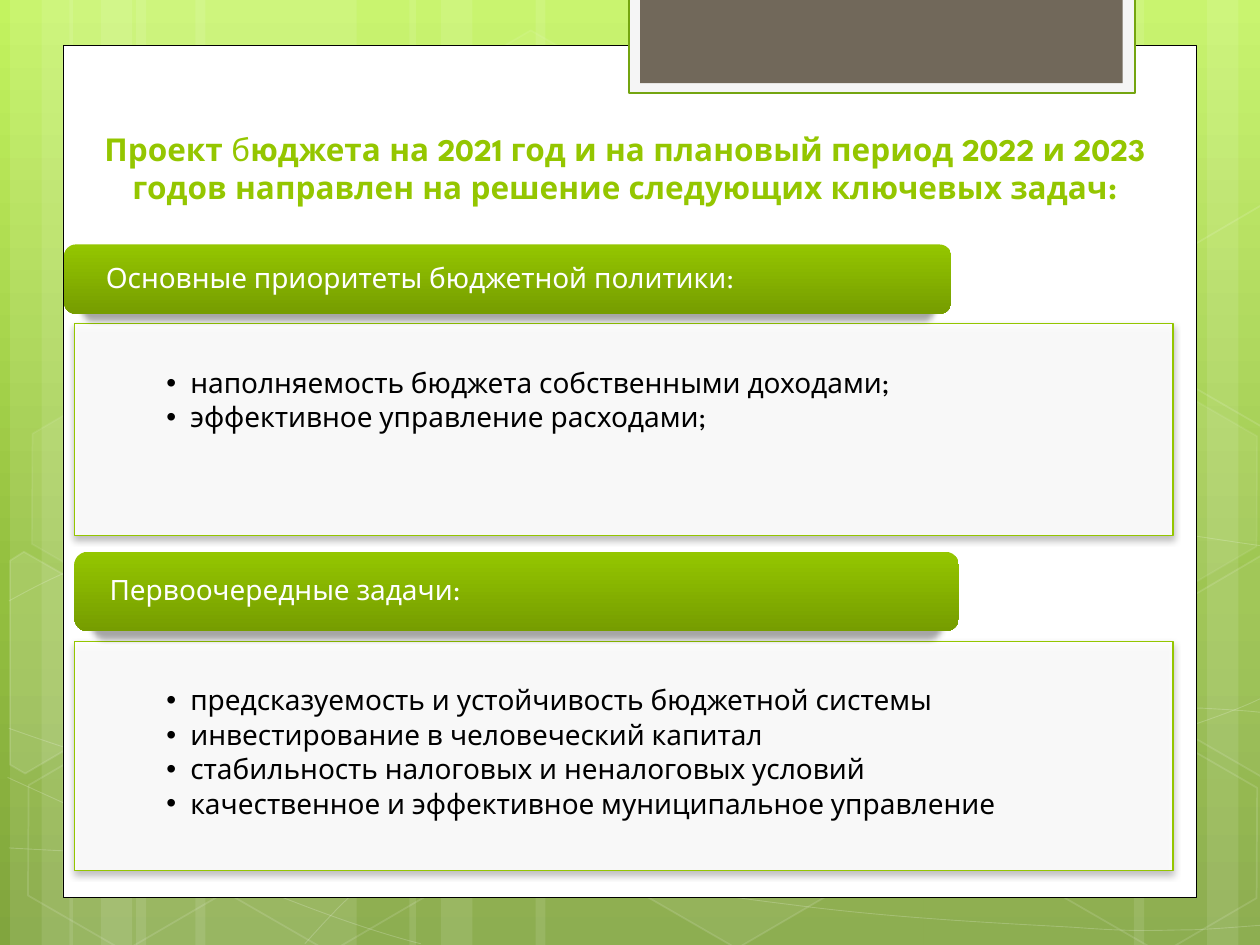
import copy

import lxml.etree
import pptx
import pptx.dml.color
import pptx.enum.shapes
import pptx.enum.text
import pptx.oxml.ns
import pptx.util

Inches = pptx.util.Inches
Pt = pptx.util.Pt
SHAPE = pptx.enum.shapes.MSO_SHAPE
ALIGN = pptx.enum.text.PP_ALIGN
ANCHOR = pptx.enum.text.MSO_ANCHOR
FONT = "League Spartan"
GREEN, WHITE, BLACK = "94C600", "FFFFFF", "000000"

# Vertical light stripes: left, width
STRIPES = [(1.08, 1.75), (0.08, 0.5), (0.33, 0.83), (1.55, 1.75),
           (0.55, 0.5), (0.8, 0.83), (7.33, 1.75), (9.58, 0.5),
           (9, 0.83), (4.25, 3.08), (3.25, 0.5), (3.5, 0.83)]

# Bezier waves: start point, then two handles and an end point per segment
WAVES = [
    [(0.07, 6.73), (0.61, 6.76), (1.15, 6.79), (1.9, 6.78),
     (2.65, 6.77), (3.58, 6.75), (4.58, 6.65), (5.58, 6.55), (7, 6.36),
     (7.92, 6.17), (8.83, 5.98), (9.77, 5.68), (10.07, 5.51)],
    [(0.07, 4.77), (0.36, 4.61), (0.65, 4.46), (1.21, 4.31),
     (1.78, 4.16), (2.59, 3.94), (3.47, 3.87), (4.36, 3.8), (5.44, 3.79),
     (6.54, 3.87), (7.64, 3.95), (9.47, 4.26), (10.07, 4.34)],
    [(0.06, 6.17), (1.27, 6.72), (2.47, 7.27), (3.34, 7.49)],
    [(0.07, 5.78), (0.38, 5.89), (0.7, 6), (1.28, 6.16),
     (1.86, 6.31), (2.73, 6.56), (3.57, 6.73), (4.4, 6.9), (5.45, 7.08),
     (6.28, 7.18), (7.11, 7.29), (8, 7.33), (8.53, 7.36),
     (9.05, 7.4), (9.19, 7.38), (9.45, 7.38), (9.71, 7.37), (9.89, 7.35),
     (10.07, 7.34)],
    [(2.42, 7.49), (2.6, 7.29), (2.78, 7.09), (3.02, 6.91),
     (3.26, 6.73), (3.6, 6.53), (3.88, 6.39), (4.16, 6.25), (4.33, 6.19),
     (4.7, 6.09), (5.06, 5.99), (5.73, 5.85), (6.08, 5.78),
     (6.44, 5.71), (6.49, 5.71), (6.8, 5.69), (7.11, 5.66), (7.6, 5.63),
     (7.94, 5.62), (8.29, 5.61), (8.86, 5.62), (8.86, 5.62),
     (9.08, 5.62), (9.31, 5.62), (9.53, 5.62), (9.71, 5.63), (9.88, 5.64),
     (9.97, 5.65), (10.06, 5.66), (10.03, 5.65), (10.06, 5.66)],
]

# Hexagons: left, top, fill opacity, line opacity
HEXAGONS = [(3.34, 0.36, 4, 8), (4.97, 5.89, 6, 12), (0.11, 5.91, 0, 12),
            (0.14, 3.12, 7, 8), (1.74, 5.92, 0, 12), (7.53, 4.53, 10, 12),
            (8.34, 5.93, 0, 12), (8.34, 3.14, 7, 8)]

# Hexagons cut by the slide edge: points, fill opacity
CUT_HEXAGONS = [
    ([(0.08, 4.45), (0.19, 4.38), (0.96, 4.82), (0.95, 5.7),
      (0.2, 6.14), (0.08, 6.07)], 10),
    ([(9.26, 4.85), (10.01, 4.41), (10.09, 4.46), (10.09, 6.13),
      (10.02, 6.17), (9.26, 5.73)], 4),
    ([(9.26, 2.07), (10.01, 1.63), (10.1, 1.68), (10.09, 3.35),
      (10.02, 3.39), (9.26, 2.95)], 0),
]


def rgb(code):
    return pptx.dml.color.RGBColor.from_string(code)


def fade(sp, where, opacity):
    """Set the opacity, in percent, of a solid fill or line."""
    if opacity < 100:
        for clr in sp.element.xpath(f"p:spPr/{where}a:solidFill/a:srgbClr"):
            alpha = lxml.etree.SubElement(clr, pptx.oxml.ns.qn("a:alpha"))
            alpha.set("val", str(opacity * 1000))


def style(sp, fill=None, opacity=100, line=None, width=1, line_opacity=100):
    sp.shadow.inherit = False
    if fill and opacity:
        sp.fill.solid()
        sp.fill.fore_color.rgb = rgb(fill)
        fade(sp, "", opacity)
    else:
        sp.fill.background()
    if line:
        sp.line.color.rgb = rgb(line)
        sp.line.width = Pt(width)
        fade(sp, "a:ln/", line_opacity)
    else:
        sp.line.fill.background()


def add_box(s, kind, box, **look):
    sp = s.shapes.add_shape(kind, *map(Inches, box))
    style(sp, **look)
    return sp


def add_path(s, points, close, **look):
    pts = [(Inches(x), Inches(y)) for x, y in points]
    builder = s.shapes.build_freeform(*pts[0], scale=1.0)
    builder.add_line_segments(pts[1:], close=close)
    sp = builder.convert_to_shape()
    style(sp, **look)
    return sp


def add_wave(s, nodes):
    """Draw an open curve by joining every three nodes into one Bezier segment."""
    sp = add_path(s, nodes, False, line=WHITE, width=0.5, line_opacity=20)
    lines = sp.element.xpath(".//a:lnTo")
    for i in range(0, len(lines), 3):
        curve = lxml.etree.Element(pptx.oxml.ns.qn("a:cubicBezTo"))
        lines[i].addprevious(curve)
        for ln in lines[i:i + 3]:
            curve.append(ln[0])
            ln.getparent().remove(ln)


def set_gradient(fill, element, stops):
    """Fill from top to bottom with (position, colour) stops."""
    fill.gradient()
    fill.gradient_angle = 270
    gs_list = element.xpath(".//a:gsLst")[0]
    while len(gs_list) < len(stops):
        gs_list.append(copy.deepcopy(gs_list[-1]))
    for stop, (position, code) in zip(fill.gradient_stops, stops):
        stop.position = position
        stop.color.rgb = rgb(code)


def add_shadow(sp, opacity, blur, dist, spread=100):
    effects = sp.element.xpath("p:spPr/a:effectLst")[0]
    effects.append(pptx.oxml.parse_xml(
        f'<a:outerShdw {pptx.oxml.ns.nsdecls("a")} blurRad="{Pt(blur)}" '
        f'dist="{Pt(dist)}" dir="5400000" sx="{spread * 1000}" algn="b" '
        f'rotWithShape="0"><a:srgbClr val="{BLACK}">'
        f'<a:alpha val="{opacity * 1000}"/></a:srgbClr></a:outerShdw>'))


def format_run(r, size, color, bold=False):
    r.font.name, r.font.size, r.font.bold = FONT, Pt(size), bold
    r.font.color.rgb = rgb(color)


def set_text(sp, box, text, color, anchor, insets, gap=0):
    """Place a placeholder in front of everything and format its text."""
    sp.element.getparent().append(sp.element)
    sp.left, sp.top, sp.width, sp.height = map(Inches, box)
    tf = sp.text_frame
    tf.text = text
    tf.word_wrap = True
    tf.auto_size = pptx.enum.text.MSO_AUTO_SIZE.NONE
    tf.vertical_anchor = anchor
    (tf.margin_left, tf.margin_top,
     tf.margin_right, tf.margin_bottom) = map(Inches, insets)
    for p in tf.paragraphs:
        p.alignment = ALIGN.LEFT
        p.line_spacing = 0.9
        p.space_before, p.space_after = Pt(0), Pt(gap)
        for r in p.runs:
            format_run(r, 16, color)
    return tf


def add_section(s, head, body, head_box, head_inset, heading, body_box, items):
    # Panel with a bulleted list
    panel = add_box(s, SHAPE.RECTANGLE, body_box, fill=WHITE, opacity=90,
                    line=GREEN, width=0.75)
    add_shadow(panel, 28, 4, 2)
    set_text(body, body_box, "\n".join(items), BLACK, ANCHOR.TOP,
             (0.73, 0.36, 0.73, 0.12), gap=2.4)
    for p in body.element.xpath(".//a:p"):
        pPr = p.get_or_add_pPr()
        pPr.set("marL", str(Inches(0.19)))
        pPr.set("indent", str(Inches(-0.19)))
    # Green heading bar
    bar = add_box(s, SHAPE.ROUNDED_RECTANGLE, head_box)
    set_gradient(bar.fill, bar.element, [(0, GREEN), (1, "769D00")])
    add_shadow(bar, 34, 3.5, 4, spread=96)
    x, y, w, h = head_box
    set_text(head, (x + 0.03, y + 0.03, w - 0.06, h - 0.06), heading,
             WHITE, ANCHOR.MIDDLE, (head_inset, 0, 0.25, 0))


def add_backdrop(s):
    set_gradient(s.background.fill, s.element,
                 [(0, "C3F35F"), (0.62, "93BF3F"), (1, "81A53E")])
    for left, width in STRIPES:
        add_box(s, SHAPE.RECTANGLE, (left, 0, width, 7.5), fill=WHITE, opacity=10)
    for nodes in WAVES:
        add_wave(s, nodes)
    for left, top, opacity, line_opacity in HEXAGONS:
        sp = add_box(s, SHAPE.HEXAGON, (left, top, 1.75, 1.52), fill=WHITE,
                     opacity=opacity, line=WHITE, line_opacity=line_opacity)
        sp.adjustments[0] = 0.285
        sp.rotation = 30
    for points, opacity in CUT_HEXAGONS:
        add_path(s, points, True, fill=WHITE, opacity=opacity, line=WHITE,
                 line_opacity=12)
    # White page and the tab at its top
    add_box(s, SHAPE.RECTANGLE, (0.5, 0.36, 9, 6.76), fill=WHITE, line=BLACK, width=0.5)
    add_box(s, SHAPE.RECTANGLE, (4.99, -0.02, 4.02, 0.76), fill="F5F5F5",
            line="74A510", width=1.25)
    add_box(s, SHAPE.RECTANGLE, (5.08, -0.02, 3.83, 0.68), fill="71685A")


def add_title(s):
    tf = set_text(s.shapes.title, (0.43, 0.84, 9.06, 0.84), "", GREEN,
                  ANCHOR.BOTTOM, (0.1, 0.05, 0.1, 0.05))
    p = tf.paragraphs[0]
    p.alignment = ALIGN.CENTER
    p.line_spacing = 1.0
    for text, bold in [("Проект ", True), ("б", False),
                       ("юджета на 2021 год и на плановый период 2022 и 2023 "
                        "годов направлен на решение следующих ключевых задач:", True)]:
        r = p.add_run()
        r.text = text
        format_run(r, 18, GREEN, bold)


def main():
    prs = pptx.Presentation()
    prs.slide_width, prs.slide_height = Inches(10), Inches(7.5)
    s = prs.slides.add_slide(prs.slide_layouts.get_by_name("Comparison"))
    _, head_1, body_1, head_2, body_2 = list(s.placeholders)[:5]
    add_backdrop(s)
    add_title(s)
    add_section(s, head_1, body_1, (0.51, 1.94, 7.04, 0.55), 0.3,
                "Основные приоритеты бюджетной политики:",
                (0.59, 2.57, 8.72, 1.68),
                ["наполняемость бюджета собственными доходами;",
                 "эффективное управление расходами;"])
    add_section(s, head_2, body_2, (0.59, 4.38, 7.02, 0.63), 0.25,
                "Первоочередные задачи:",
                (0.59, 5.09, 8.72, 1.82),
                ["предсказуемость и устойчивость бюджетной системы",
                 "инвестирование в человеческий капитал",
                 "стабильность налоговых и неналоговых условий",
                 "качественное и эффективное муниципальное управление"])
    prs.save("out.pptx")


if __name__ == "__main__":
    main()
